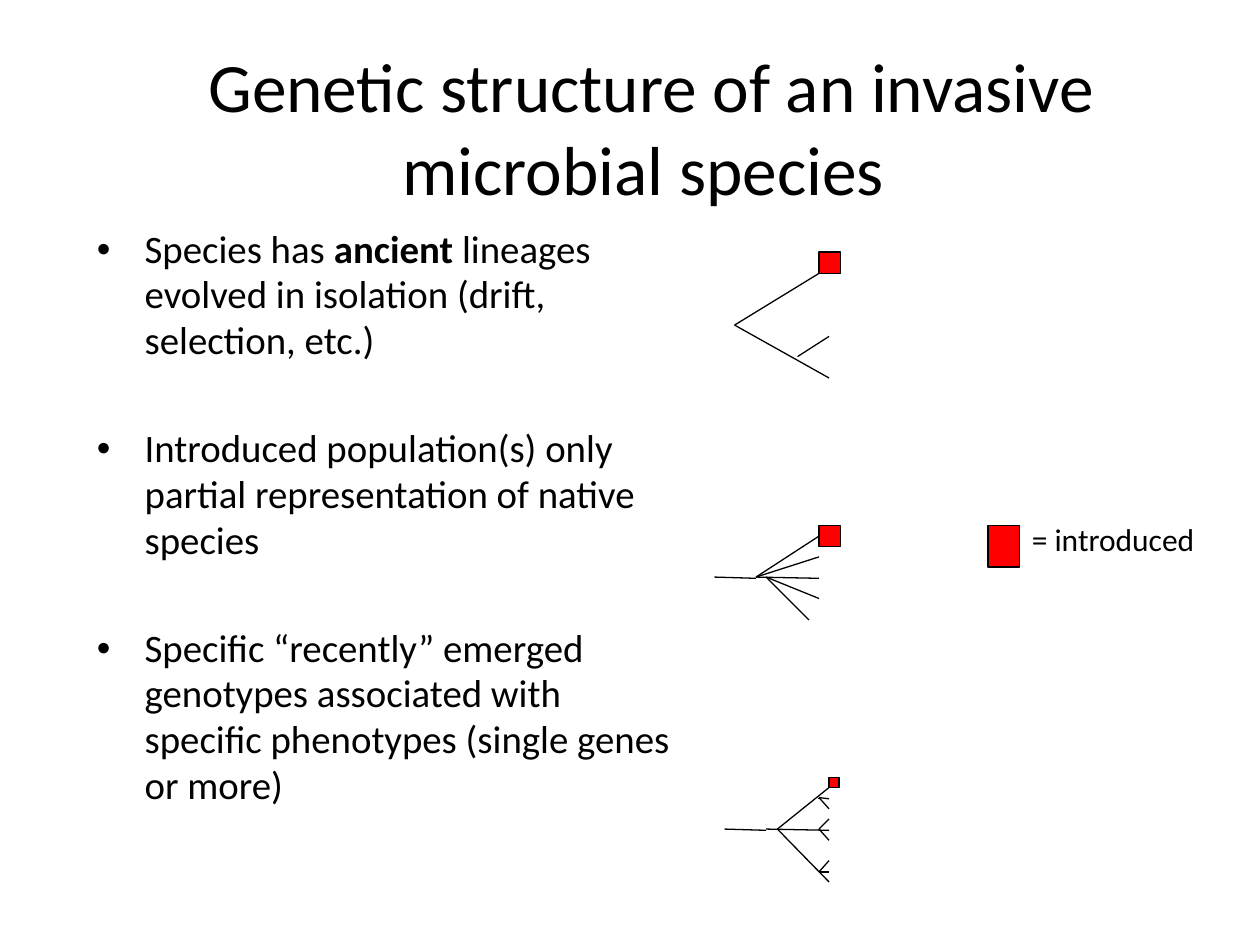
from dataclasses import dataclass

from lxml.etree import SubElement
from pptx import Presentation
from pptx.dml.color import RGBColor
from pptx.enum.shapes import MSO_CONNECTOR, MSO_SHAPE
from pptx.enum.text import MSO_ANCHOR, PP_ALIGN
from pptx.oxml.ns import qn
from pptx.util import Inches, Pt


@dataclass(frozen=True)
class Theme:
    font: str = "Calibri"
    ink: RGBColor = RGBColor(0, 0, 0)
    introduced: RGBColor = RGBColor(255, 0, 0)
    title_size: float = 39.6
    body_size: float = 22.2
    label_size: float = 18
    line_width: float = 0.75
    bullet_gap: float = 35.7
    bullet_indent: float = 0.38
    line_spacing: float = 0.98


TITLE = "Genetic structure of an invasive microbial species "
BULLETS = [
    [("Species has ", False), ("ancient", True),
     (" lineages evolved in isolation (drift, selection, etc.)", False)],
    [("Introduced population(s) only partial representation of native species", False)],
    [("Specific “recently” emerged genotypes associated with specific phenotypes "
      "(single genes or more)", False)],
]

ANCIENT_TREE = {
    (5.83, 2.58): [(6.5, 2.17), (6.58, 3)],
    (6.33, 2.83): [(6.58, 2.67)],
}
PARTIAL_TREE = {
    (5.67, 4.58): [(6, 4.59)],
    (6, 4.58): [(6.5, 4.42), (6.5, 4.59)],
    (6.08, 4.58): [(6.5, 4.75), (6.42, 4.92)],
}
RECENT_TREE = {
    (5.75, 6.58): [(6.08, 6.59)],
    (6.08, 6.58): [(6.58, 6.59)],
    (6.17, 6.58): [(6.58, 6.25), (6.58, 7)],
    (6.5, 6.33): [(6.5, 6.34), (6.58, 6.34), (6.58, 6.42)],
    (6.5, 6.58): [(6.58, 6.5), (6.58, 6.67)],
    (6.5, 6.92): [(6.58, 6.92), (6.58, 6.83)],
}


class SlideBuilder:
    """Hold the theme and the current slide, and add elements to it."""

    def __init__(self, slide, theme):
        self.slide = slide
        self.theme = theme

    def style(self, font, size, bold=False):
        """Apply the theme font and ink."""
        font.name = self.theme.font
        font.size = Pt(size)
        font.bold = bold
        font.color.rgb = self.theme.ink

    def title(self, text, left, top, width, height):
        """Place and fill the title placeholder."""
        box = self.slide.shapes.title
        box.left, box.top = Inches(left), Inches(top)
        box.width, box.height = Inches(width), Inches(height)
        frame = box.text_frame
        frame.text = text
        frame.vertical_anchor = MSO_ANCHOR.MIDDLE
        para = frame.paragraphs[0]
        para.alignment = PP_ALIGN.CENTER
        self.style(para.runs[0].font, self.theme.title_size)

    def text_box(self, left, top, width, height, wrap):
        """Add an empty text box and return its frame."""
        box = self.slide.shapes.add_textbox(
            Inches(left), Inches(top), Inches(width), Inches(height))
        box.text_frame.word_wrap = wrap
        return box.text_frame

    def label(self, text, left, top, width, height):
        """Add a single-line label."""
        frame = self.text_box(left, top, width, height, False)
        frame.text = text
        self.style(frame.paragraphs[0].runs[0].font, self.theme.label_size)

    def bullets(self, items, left, top, width, height):
        """Add a bulleted list whose items are runs of text and boldness."""
        frame = self.text_box(left, top, width, height, True)
        indent = Inches(self.theme.bullet_indent)
        for index, item in enumerate(items):
            para = frame.add_paragraph() if index else frame.paragraphs[0]
            para.line_spacing = self.theme.line_spacing
            if index:
                para.space_before = Pt(self.theme.bullet_gap)
            properties = para._p.get_or_add_pPr()
            properties.set("marL", str(indent))
            properties.set("indent", str(-indent))
            SubElement(properties, qn("a:buFont")).set("typeface", "Arial")
            SubElement(properties, qn("a:buChar")).set("char", "•")
            for text, bold in item:
                span = para.add_run()
                span.text = text
                self.style(span.font, self.theme.body_size, bold)

    def marker(self, left, top, width, height):
        """Add a rectangle that marks an introduced population."""
        box = self.slide.shapes.add_shape(
            MSO_SHAPE.RECTANGLE, Inches(left), Inches(top), Inches(width), Inches(height))
        box.shadow.inherit = False
        box.fill.solid()
        box.fill.fore_color.rgb = self.theme.introduced
        box.line.color.rgb = self.theme.ink
        box.line.width = Pt(self.theme.line_width)
        return box

    def branch(self, start, end):
        """Add one straight branch."""
        line = self.slide.shapes.add_connector(
            MSO_CONNECTOR.STRAIGHT, *(Inches(value) for value in (*start, *end)))
        line.line.color.rgb = self.theme.ink
        line.line.width = Pt(self.theme.line_width)
        SubElement(line._element.spPr, qn("a:effectLst"))
        return line

    def tree(self, forks):
        """Add the branches from each fork to its tips."""
        for fork, tips in forks.items():
            for tip in tips:
                self.branch(fork, tip)


def main():
    deck = Presentation()
    deck.slide_width, deck.slide_height = Inches(10), Inches(7.5)
    page = SlideBuilder(deck.slides.add_slide(deck.slide_layouts[5]), Theme())

    page.title(TITLE, 0.92, 0.25, 8.5, 1.5)
    page.bullets(BULLETS, 0.67, 1.75, 4.83, 4.5)

    for forks in (ANCIENT_TREE, PARTIAL_TREE, RECENT_TREE):
        page.tree(forks)
    page.marker(6.5, 2, 0.17, 0.17)
    partial_marker = page.marker(6.5, 4.17, 0.17, 0.17)
    page.branch((6, 4.58), (6.5, 4.25)).end_connect(partial_marker, 1)
    page.marker(6.58, 6.17, 0.08, 0.08)

    page.marker(7.84, 4.17, 0.25, 0.33)
    page.label("= introduced", 8.09, 4.08, 1.91, 0.51)
    deck.save("out.pptx")


if __name__ == "__main__":
    main()
